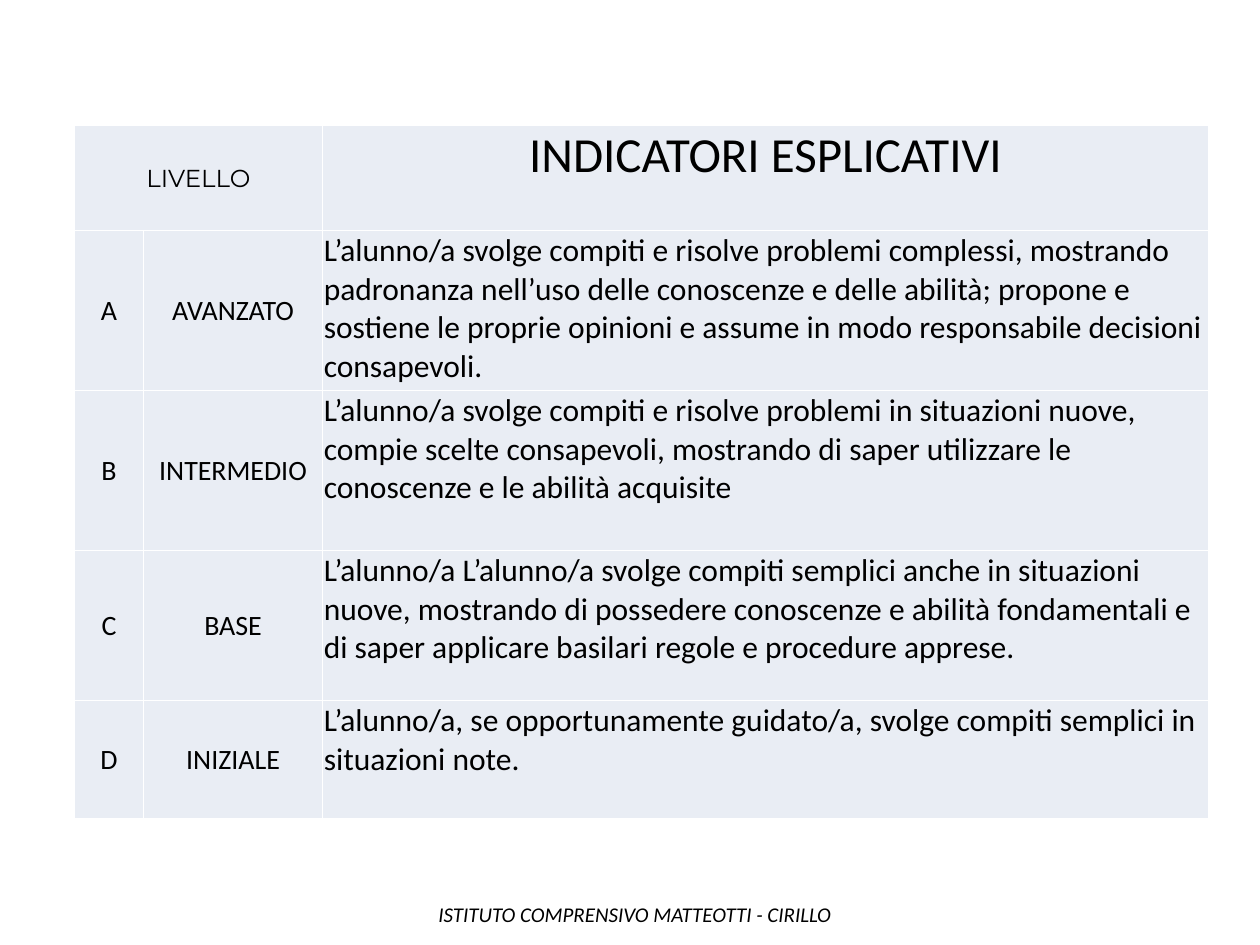
"""Build a slide with a table of four competence levels and their indicators."""
from dataclasses import dataclass

from lxml import etree
from pptx import Presentation
from pptx import util as u
from pptx.dml.color import RGBColor
from pptx.enum import text
from pptx.oxml import ns

BLACK = RGBColor(0x00, 0x00, 0x00)
WHITE = RGBColor(0xFF, 0xFF, 0xFF)
PALE_BLUE = RGBColor(0xE9, 0xED, 0xF4)
PAGE_WIDTH, PAGE_HEIGHT = u.Inches(10), u.Inches(7.5)
TABLE_LEFT, TABLE_TOP = u.Inches(0.59), u.Inches(0.99)
COLUMN_WIDTHS = [u.Inches(width) for width in (0.55, 1.42, 7.03)]
HEADER_HEIGHT = u.Inches(0.84)
CELL_MARGIN = u.Inches(0.01)


@dataclass(frozen=True)
class Level:
    """One row of the table: a grade, its name and its indicator."""

    grade: str
    name: str
    indicator: str
    height: float


LEVELS = [
    Level("A", "AVANZATO",
          "L’alunno/a svolge compiti e risolve problemi complessi, mostrando padronanza "
          "nell’uso delle conoscenze e delle abilità; propone e sostiene le proprie opinioni "
          "e assume in modo responsabile decisioni consapevoli.", 1.27),
    Level("B", "INTERMEDIO",
          "L’alunno/a svolge compiti e risolve problemi in situazioni nuove, compie scelte "
          "consapevoli, mostrando di saper utilizzare le conoscenze e le abilità acquisite", 1.27),
    Level("C", "BASE",
          "L’alunno/a L’alunno/a svolge compiti semplici anche in situazioni nuove, mostrando "
          "di possedere conoscenze e abilità fondamentali e di saper applicare basilari regole "
          "e procedure apprese.", 1.19),
    Level("D", "INIZIALE",
          "L’alunno/a, se opportunamente guidato/a, svolge compiti semplici in situazioni note.",
          0.94),
]


def write(frame, words: str, *, size: float, font: str = "Calibri", italic: bool = False,
          align=text.PP_ALIGN.LEFT) -> None:
    """Write one formatted paragraph into a text frame."""
    para = frame.paragraphs[0]
    para.alignment = align
    span = para.add_run()
    span.text = words
    span.font.size = u.Pt(size)
    span.font.name = font
    span.font.italic = italic
    span.font.bold = False
    span.font.color.rgb = BLACK


def style_cell(cell) -> None:
    """Give a cell thin margins, white borders and a pale fill."""
    cell.margin_left = cell.margin_right = cell.margin_top = CELL_MARGIN
    cell.margin_bottom = 0
    properties = cell._tc.get_or_add_tcPr()
    for side in ("lnL", "lnR", "lnT", "lnB"):
        line = etree.SubElement(properties, ns.qn(f"a:{side}"), w=str(u.Pt(1)))
        fill = etree.SubElement(line, ns.qn("a:solidFill"))
        etree.SubElement(fill, ns.qn("a:srgbClr"), val=str(WHITE))
    cell.fill.solid()
    cell.fill.fore_color.rgb = PALE_BLUE


def write_label(cell, words: str, **style) -> None:
    """Write a label in the middle of a cell."""
    cell.vertical_anchor = text.MSO_ANCHOR.MIDDLE
    write(cell.text_frame, words, align=text.PP_ALIGN.CENTER, **style)


def add_level_table(page) -> None:
    """Add the table with its header and one row for each level."""
    heights = [HEADER_HEIGHT] + [u.Inches(level.height) for level in LEVELS]
    table = page.shapes.add_table(len(heights), len(COLUMN_WIDTHS), TABLE_LEFT, TABLE_TOP,
                                  sum(COLUMN_WIDTHS), sum(heights)).table
    for column, width in zip(table.columns, COLUMN_WIDTHS):
        column.width = width
    for row, height in zip(table.rows, heights):
        row.height = height
    for cell in table.iter_cells():
        style_cell(cell)

    table.cell(0, 0).merge(table.cell(0, 1))
    write_label(table.cell(0, 0), "LIVELLO", size=14, font="Montserrat")
    write(table.cell(0, 2).text_frame, "INDICATORI ESPLICATIVI", size=28,
          align=text.PP_ALIGN.CENTER)
    for index, level in enumerate(LEVELS, start=1):
        write_label(table.cell(index, 0), level.grade, size=16)
        write_label(table.cell(index, 1), level.name, size=16)
        write(table.cell(index, 2).text_frame, level.indicator, size=18)


def add_school_name(page) -> None:
    """Add the name of the school at the foot of the page."""
    box = page.shapes.add_textbox(u.Inches(3.38), u.Inches(7.11), u.Inches(3.42), u.Inches(0.3))
    box.text_frame.word_wrap = False
    box.text_frame.auto_size = text.MSO_AUTO_SIZE.SHAPE_TO_FIT_TEXT
    write(box.text_frame, "ISTITUTO COMPRENSIVO MATTEOTTI - CIRILLO", size=12, italic=True)


def main() -> None:
    """Build and save the deck."""
    deck = Presentation()
    deck.slide_width, deck.slide_height = PAGE_WIDTH, PAGE_HEIGHT
    page = deck.slides.add_slide(deck.slide_layouts[6])
    add_level_table(page)
    add_school_name(page)
    deck.save("out.pptx")


if __name__ == "__main__":
    main()
